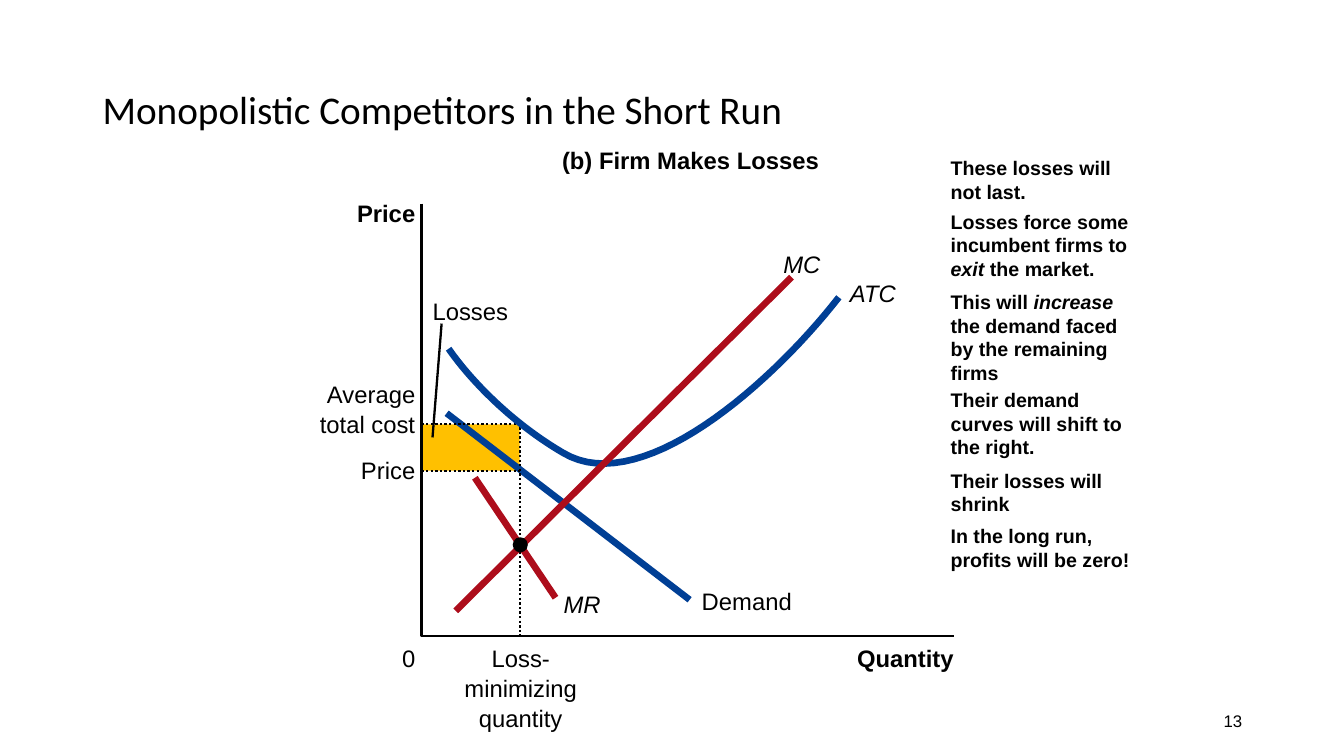
from pptx import Presentation
from pptx.dml.color import RGBColor
from pptx.enum.dml import MSO_LINE
from pptx.enum.shapes import MSO_CONNECTOR, MSO_SHAPE
from pptx.enum.text import MSO_ANCHOR, PP_ALIGN
from pptx.oxml.ns import qn
from pptx.util import Inches, Pt
from lxml import etree

BLACK = RGBColor(0x00, 0x00, 0x00)
BLUE = RGBColor(0x00, 0x3F, 0x95)
RED = RGBColor(0xAD, 0x0D, 0x1B)
GOLD = RGBColor(0xFF, 0xC0, 0x00)

THIN = {"color": BLACK, "width": 1.63}
DOTTED = {**THIN, "dash": MSO_LINE.ROUND_DOT}
BLUE_CURVE = {"color": BLUE, "width": 4.75}
RED_CURVE = {"color": RED, "width": 4.75}
BOLD = {"bold": True}
ITALIC = {"italic": True}
LEFT, CENTER, RIGHT = PP_ALIGN.LEFT, PP_ALIGN.CENTER, PP_ALIGN.RIGHT


def add_text(slide, box, runs, size, font="Arial", align=LEFT, inset=None,
             **frame):
    tf = slide.shapes.add_textbox(*map(Inches, box)).text_frame
    settings = {"word_wrap": True, **frame}
    if inset is not None:
        for side in ("left", "top", "right", "bottom"):
            settings[f"margin_{side}"] = Inches(inset)
    for name, value in settings.items():
        setattr(tf, name, value)
    p = tf.paragraphs[0]
    p.alignment = align
    for text, style in runs:
        r = p.add_run()
        r.text = text
        r.font.color.rgb = BLACK
        for name, value in {"name": font, "size": Pt(size), **style}.items():
            setattr(r.font, name, value)
    return p


def style_line(line, color, width, dash=None):
    line.color.rgb = color
    line.width = Pt(width)
    if dash is not None:
        line.dash_style = dash


def add_label(slide, origin, x, y, w, text, align=LEFT, style={}):
    left = x - {LEFT: 0, CENTER: w / 2, RIGHT: w}[align]
    add_text(slide, (origin[0] + left, origin[1] + y, w, 0.29),
             [(text, style)], 17, align=align, inset=0, word_wrap=False)


def add_segment(slide, origin, start, end, style):
    ends = [Inches(o + v) for point in (start, end)
            for o, v in zip(origin, point)]
    cxn = slide.shapes.add_connector(MSO_CONNECTOR.STRAIGHT, *ends)
    style_line(cxn.line, **style)
    etree.SubElement(cxn._element.spPr, qn("a:effectLst"))


def add_path(slide, origin, points, style):
    pts = [tuple(Inches(o + v) for o, v in zip(origin, point))
           for point in points]
    fb = slide.shapes.build_freeform(*pts[0])
    fb.add_line_segments(pts[1:], close=False)
    sp = fb.convert_to_shape()
    sp.fill.background()
    sp.shadow.inherit = False
    style_line(sp.line, **style)


def add_solid(slide, origin, kind, x, y, w, h, color):
    sp = slide.shapes.add_shape(
        kind, *map(Inches, (origin[0] + x, origin[1] + y, w, h)))
    sp.shadow.inherit = False
    sp.fill.solid()
    sp.fill.fore_color.rgb = color
    sp.line.fill.background()


def bezier(p0, p1, p2, p3, steps=30):
    for i in range(steps + 1):
        t = i / steps
        u = 1 - t
        yield tuple(u**3 * a + 3 * u * u * t * b + 3 * u * t * t * c + t**3 * d
                    for a, b, c, d in zip(p0, p1, p2, p3))


def add_graph(slide, left, top, width, height):
    origin = (left, top)
    quantity, cost, price = 0.975, 2.19, 2.65
    axis_label, pitch = -0.06, 0.295

    add_solid(slide, origin, MSO_SHAPE.RECTANGLE,
              0, cost, quantity, price - cost, GOLD)
    add_path(slide, origin, [(0, 0), (0, height), (width, height)], THIN)
    add_segment(slide, origin, (0.25, 2.08), (2.66, 3.93), BLUE_CURVE)
    add_segment(slide, origin, (0, price), (quantity, price), DOTTED)
    add_path(slide, origin,
             [(0, cost), (quantity, cost), (quantity, height)], DOTTED)
    add_segment(slide, origin, (0.53, 2.72), (1.33, 3.91), RED_CURVE)
    add_segment(slide, origin, (0.2, 1.19), (0.11, 2.32), THIN)
    falling = bezier((0.27, 1.44), (0.45, 1.7), (0.84, 2.14), (1.4, 2.47))
    rising = bezier((1.4, 2.47), (2.17, 2.94), (3.47, 1.79), (4.14, 0.93))
    add_path(slide, origin, [*falling, *list(rising)[1:]], BLUE_CURVE)
    add_segment(slide, origin, (3.67, 0.73), (0.34, 4.04), RED_CURVE)
    add_solid(slide, origin, MSO_SHAPE.OVAL,
              quantity - 0.07, 3.31, 0.15, 0.15, BLACK)

    for y, w, text, style in [
        (-0.05, 0.59, "Price", BOLD),
        (1.75, 0.89, "Average", {}),
        (1.75 + pitch, 0.96, "total cost", {}),
        (2.5, 0.54, "Price", {}),
        (height + 0.08, 0.13, "0", {}),
    ]:
        add_label(slide, origin, axis_label, y, w, text, RIGHT, style)
    for i, (w, text) in enumerate(
            [(0.58, "Loss-"), (1.12, "minimizing"), (0.84, "quantity")]):
        add_label(slide, origin, quantity + 0.01, height + 0.08 + i * pitch,
                  w, text, CENTER)
    add_label(slide, origin, width, height + 0.08, 0.97, "Quantity",
              RIGHT, BOLD)
    add_label(slide, origin, width / 2 + 0.03, -0.57, 2.58,
              "(b) Firm Makes Losses", CENTER, BOLD)
    for x, y, w, text, style in [
        (2.78, 3.8, 0.9, "Demand", {}),
        (1.41, 3.83, 0.37, "MR", ITALIC),
        (0.11, 0.92, 0.76, "Losses", {}),
        (4.25, 0.74, 0.46, "ATC", ITALIC),
        (3.59, 0.46, 0.37, "MC", ITALIC),
    ]:
        add_label(slide, origin, x, y, w, text, LEFT, style)


def add_notes_column(slide, left, top, width):
    for y, w, h, runs in [
        (0, 2, 0.57, [("These losses will not last.", {})]),
        (0.53, 2, 0.81, [("Losses force some incumbent firms to ", {}),
                         ("exit ", ITALIC), ("the market.", {})]),
        (1.33, width, 1.04, [
            ("This will ", {}), ("increase", ITALIC),
            (" the demand faced by the remaining firms", {})]),
        (2.3, width, 0.81,
         [("Their demand curves will shift to the right.", {})]),
        (3.1, width, 0.57, [("Their losses will shrink", {})]),
        (3.65, width, 0.57, [("In the long run, profits will be zero!", {})]),
    ]:
        add_text(slide, (left, top + y, w, h),
                 [(text, {**BOLD, **style}) for text, style in runs], 14)


def add_heading(slide, *box):
    p = add_text(slide, box, [("Monopolistic Competitors in the Short Run", {})],
                 28, font="Calibri", vertical_anchor=MSO_ANCHOR.MIDDLE)
    p.line_spacing = 0.8


def add_page_number(slide, *box):
    add_text(slide, box, [("13", {})], 12, align=RIGHT,
             vertical_anchor=MSO_ANCHOR.MIDDLE)


def main():
    prs = Presentation()
    prs.slide_width, prs.slide_height = Inches(13.33), Inches(7.5)
    slide = prs.slides.add_slide(prs.slide_layouts[6])
    add_heading(slide, 0.92, 0.4, 11.5, 1.45)
    add_page_number(slide, 9.42, 6.95, 3, 0.4)
    add_graph(slide, 4.18, 2.02, 5.28, 4.29)
    add_notes_column(slide, 9.33, 1.5, 2.08)
    prs.save("out.pptx")


if __name__ == "__main__":
    main()
